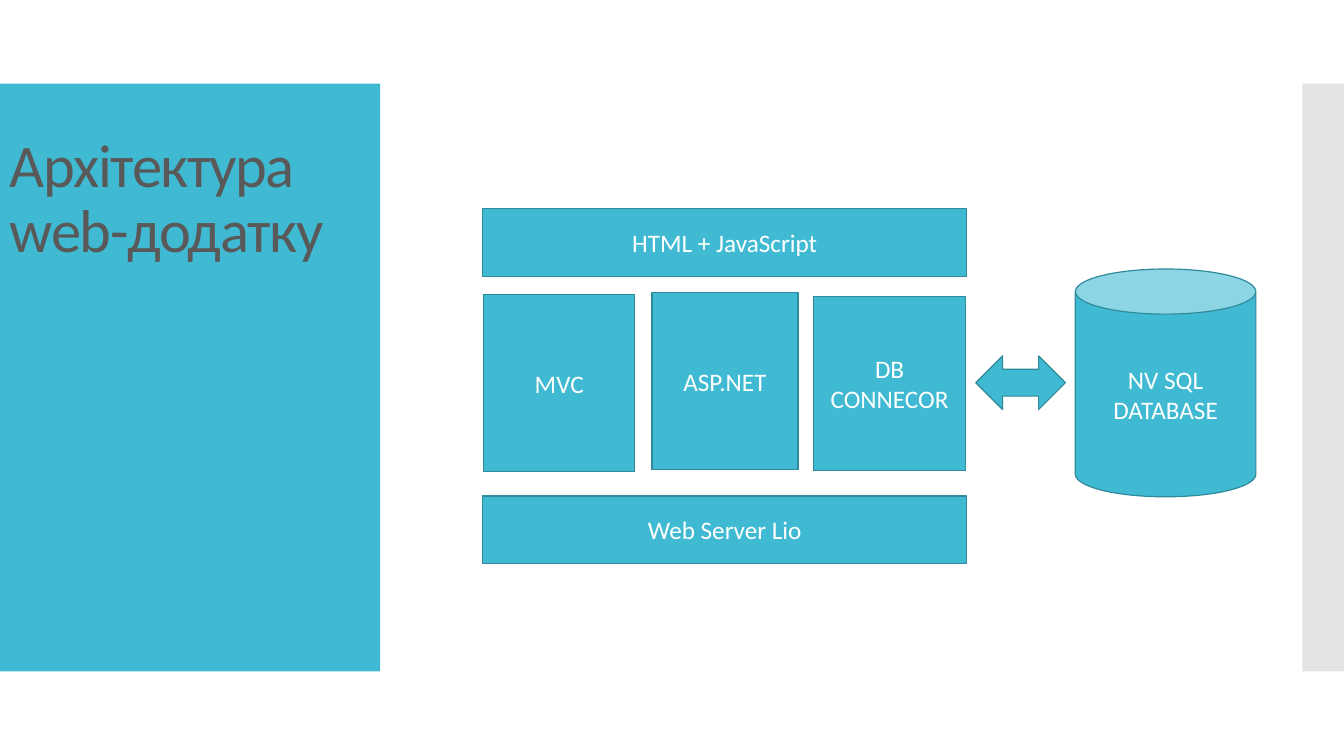
"""Build a slide that shows the architecture of a web application."""
from lxml import etree
from pptx import Presentation
from pptx import util as u
from pptx.dml.color import RGBColor
from pptx.enum import shapes, text
from pptx.oxml import ns

TEAL = RGBColor(0x40, 0xBA, 0xD2)
EDGE = RGBColor(0x2F, 0x8A, 0x9B)
GRAY = RGBColor(0xC8, 0xC8, 0xC8)
DARK = RGBColor(0x59, 0x59, 0x59)
WHITE = RGBColor(0xFF, 0xFF, 0xFF)
KIND = shapes.MSO_SHAPE


class Page:
    """Holds the style and the current slide."""

    font = "Calibri"
    size = 18

    def __init__(self, deck):
        """Add a blank slide to the deck."""
        self.slide = deck.slides.add_slide(deck.slide_layouts[6])

    def shape(self, kind, box, fill):
        """Add a filled shape without shadow or line."""
        item = self.slide.shapes.add_shape(kind, *map(u.Cm, box))
        item.shadow.inherit = False
        item.fill.solid()
        item.fill.fore_color.rgb = fill
        item.line.fill.background()
        return item

    def panel(self, box, fill, alpha=100):
        """Add a plain background panel, opaque to alpha percent."""
        item = self.shape(KIND.RECTANGLE, box, fill)
        if alpha < 100:
            color = item.fill._xPr.find(".//" + ns.qn("a:srgbClr"))
            etree.SubElement(color, ns.qn("a:alpha"), val=str(alpha * 1000))

    def title(self, words, box):
        """Add the slide title, set at the bottom of its box."""
        frame = self.slide.shapes.add_textbox(*map(u.Cm, box)).text_frame
        frame.word_wrap = True
        frame.vertical_anchor = text.MSO_ANCHOR.BOTTOM
        frame.text = words
        line = frame.paragraphs[0]
        line.line_spacing = 0.9
        self.style(line, 43.2, DARK)
        line.runs[0]._r.get_or_add_rPr().set("spc", "-100")

    def block(self, kind, box, words=""):
        """Add an outlined part of the diagram with a centred label."""
        item = self.shape(kind, box, TEAL)
        item.line.color.rgb = EDGE
        item.line.width = u.Pt(0.85)
        frame = item.text_frame
        frame.word_wrap = True
        frame.vertical_anchor = text.MSO_ANCHOR.MIDDLE
        frame.text = words
        for line in frame.paragraphs:
            line.alignment = text.PP_ALIGN.CENTER
            self.style(line, self.size, WHITE)

    def style(self, line, size, color):
        """Set the font of a paragraph."""
        line.font.name = self.font
        line.font.size = u.Pt(size)
        line.font.color.rgb = color


def main():
    """Draw the slide and save it."""
    deck = Presentation()
    deck.slide_width, deck.slide_height = u.Cm(33.87), u.Cm(19.05)
    page = Page(deck)
    page.panel((0, 2.11, 9.58, 14.81), TEAL)
    page.panel((32.82, 2.11, 1.05, 14.81), GRAY, 50)
    page.title("Архітектура web-додатку", (0, 2.11, 9.5, 4.72))

    page.block(KIND.CAN, (27.1, 6.78, 4.55, 5.74), "NV SQL\nDATABASE")
    for top, words in ((12.5, "Web Server Lio"), (5.26, "HTML + JavaScript")):
        page.block(KIND.FLOWCHART_PROCESS, (12.17, top, 12.19, 1.7), words)
    for box, words in (
        ((12.19, 7.42, 3.81, 4.47), "MVC"),
        ((16.43, 7.37, 3.68, 4.47), "ASP.NET"),
        ((20.5, 7.47, 3.84, 4.39), "DB\nCONNECOR"),
    ):
        page.block(KIND.RECTANGLE, box, words)
    page.block(KIND.LEFT_RIGHT_ARROW, (24.59, 8.97, 2.26, 1.35))
    deck.save("out.pptx")


if __name__ == "__main__":
    main()
